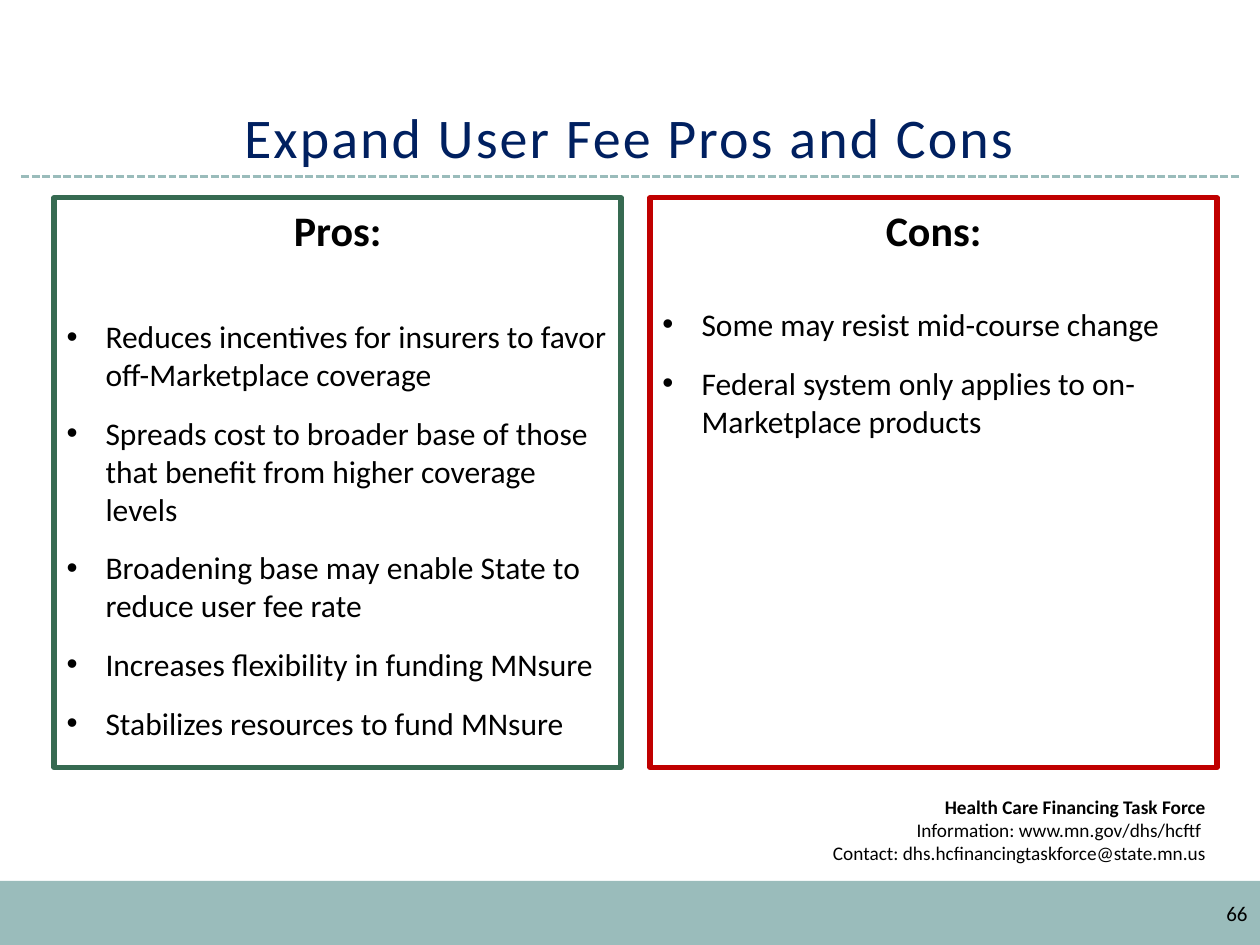
from lxml import etree
from pptx import Presentation
from pptx import util as u
from pptx.dml.color import RGBColor
from pptx.enum import dml, shapes, text
from pptx.oxml.ns import qn

FONT = "Calibri"
TEAL, NAVY, GREEN, RED = "9ABCBB", "002060", "366A51", "C00000"
BLACK, WHITE = "000000", "FFFFFF"
WIDTH, HEIGHT = 10, 7.5
BAND_TOP = 6.99
RULE_MARGIN, RULE_TOP = 0.17, 1.4
PANEL_LEFT, PANEL_TOP, PANEL_WIDTH, PANEL_HEIGHT = 0.43, 1.57, 4.5, 4.52
PANEL_STEP = 4.73
BULLET_INDENT = 0.31

# heading, border colour, space after heading in points, bullets
PANELS = [
    ("Pros:", GREEN, 36, [
        "Reduces incentives for insurers to favor off-Marketplace coverage",
        "Spreads cost to broader base of those that benefit from higher coverage levels",
        "Broadening base may enable State to reduce user fee rate",
        "Increases flexibility in funding MNsure",
        "Stabilizes resources to fund MNsure",
    ]),
    ("Cons:", RED, 29, [
        "Some may resist mid-course change",
        "Federal system only applies to on-Marketplace products",
    ]),
]


def color(value):
    return RGBColor.from_string(value)


def inches(*lengths):
    return [u.Inches(length) for length in lengths]


def style(paragraph, size, ink=BLACK, bold=False, align=text.PP_ALIGN.LEFT):
    paragraph.alignment = align
    font = paragraph.font
    font.name, font.size, font.bold = FONT, u.Pt(size), bold
    font.color.rgb = color(ink)


def add_rectangle(slide, place, fill, border=None):
    box = slide.shapes.add_shape(shapes.MSO_SHAPE.RECTANGLE, *inches(*place))
    box.shadow.inherit = False
    box.fill.solid()
    box.fill.fore_color.rgb = color(fill)
    if border:
        box.line.color.rgb = color(border)
        box.line.width = u.Pt(3)
    else:
        box.line.fill.background()
    box.text_frame.word_wrap = True
    box.text_frame.vertical_anchor = text.MSO_ANCHOR.TOP
    return box


def add_bullet(frame, wording):
    paragraph = frame.add_paragraph()
    paragraph.text = wording
    properties = paragraph._p.get_or_add_pPr()
    properties.set("marL", str(u.Inches(BULLET_INDENT)))
    properties.set("indent", str(-u.Inches(BULLET_INDENT)))
    etree.SubElement(properties, qn("a:buFont"), typeface="Arial")
    etree.SubElement(properties, qn("a:buChar"), char="•")
    paragraph.space_after = u.Pt(12)
    style(paragraph, 18)


def add_panel(slide, column, heading, border, gap, bullets):
    place = (PANEL_LEFT + column * PANEL_STEP, PANEL_TOP, PANEL_WIDTH, PANEL_HEIGHT)
    frame = add_rectangle(slide, place, WHITE, border).text_frame
    first = frame.paragraphs[0]
    first.text = heading
    first.space_after = u.Pt(gap)
    style(first, 24, bold=True, align=text.PP_ALIGN.CENTER)
    for bullet in bullets:
        add_bullet(frame, bullet)


def add_dashed_rule(slide):
    rule = slide.shapes.add_connector(
        shapes.MSO_CONNECTOR.STRAIGHT,
        *inches(RULE_MARGIN, RULE_TOP, WIDTH - RULE_MARGIN, RULE_TOP))
    rule.line.color.rgb = color(TEAL)
    rule.line.width = u.Pt(1.5)
    rule.line.dash_style = dml.MSO_LINE.SQUARE_DOT
    etree.SubElement(rule._element.spPr, qn("a:effectLst"))


def set_title(slide, wording):
    title = slide.shapes.title
    title.left, title.top, title.width, title.height = inches(0.33, 0.25, 9.33, 1.15)
    frame = title.text_frame
    frame.text = wording
    frame.word_wrap = True
    frame.auto_size = text.MSO_AUTO_SIZE.NONE
    frame.vertical_anchor = text.MSO_ANCHOR.BOTTOM
    paragraph = frame.paragraphs[0]
    paragraph.line_spacing = u.Pt(40)
    style(paragraph, 32, NAVY, align=text.PP_ALIGN.CENTER)
    paragraph.runs[0].font._element.set("spc", "120")


def add_contact(slide):
    frame = add_rectangle(slide, (4.54, 6.26, 5.13, 0.67), WHITE).text_frame
    frame.text = ("Health Care Financing Task Force\vInformation: www.mn.gov/dhs/hcftf \n"
                  "Contact: dhs.hcfinancingtaskforce@state.mn.us")
    for paragraph in frame.paragraphs:
        style(paragraph, 11, align=text.PP_ALIGN.RIGHT)
    frame.paragraphs[0].runs[0].font.bold = True


def add_page_number(slide, number):
    box = slide.shapes.add_textbox(*inches(7.67, 7.1, 2.33, 0.4))
    box.text_frame.word_wrap = True
    box.text_frame.text = number
    style(box.text_frame.paragraphs[0], 12, align=text.PP_ALIGN.RIGHT)


def main():
    deck = Presentation()
    deck.slide_width, deck.slide_height = inches(WIDTH, HEIGHT)
    slide = deck.slides.add_slide(deck.slide_layouts[5])
    add_rectangle(slide, (0, BAND_TOP, WIDTH, HEIGHT - BAND_TOP), TEAL)
    add_dashed_rule(slide)
    add_contact(slide)
    set_title(slide, "Expand User Fee Pros and Cons")
    for column, panel in enumerate(PANELS):
        add_panel(slide, column, *panel)
    add_page_number(slide, "66")
    deck.save("out.pptx")


if __name__ == "__main__":
    main()
